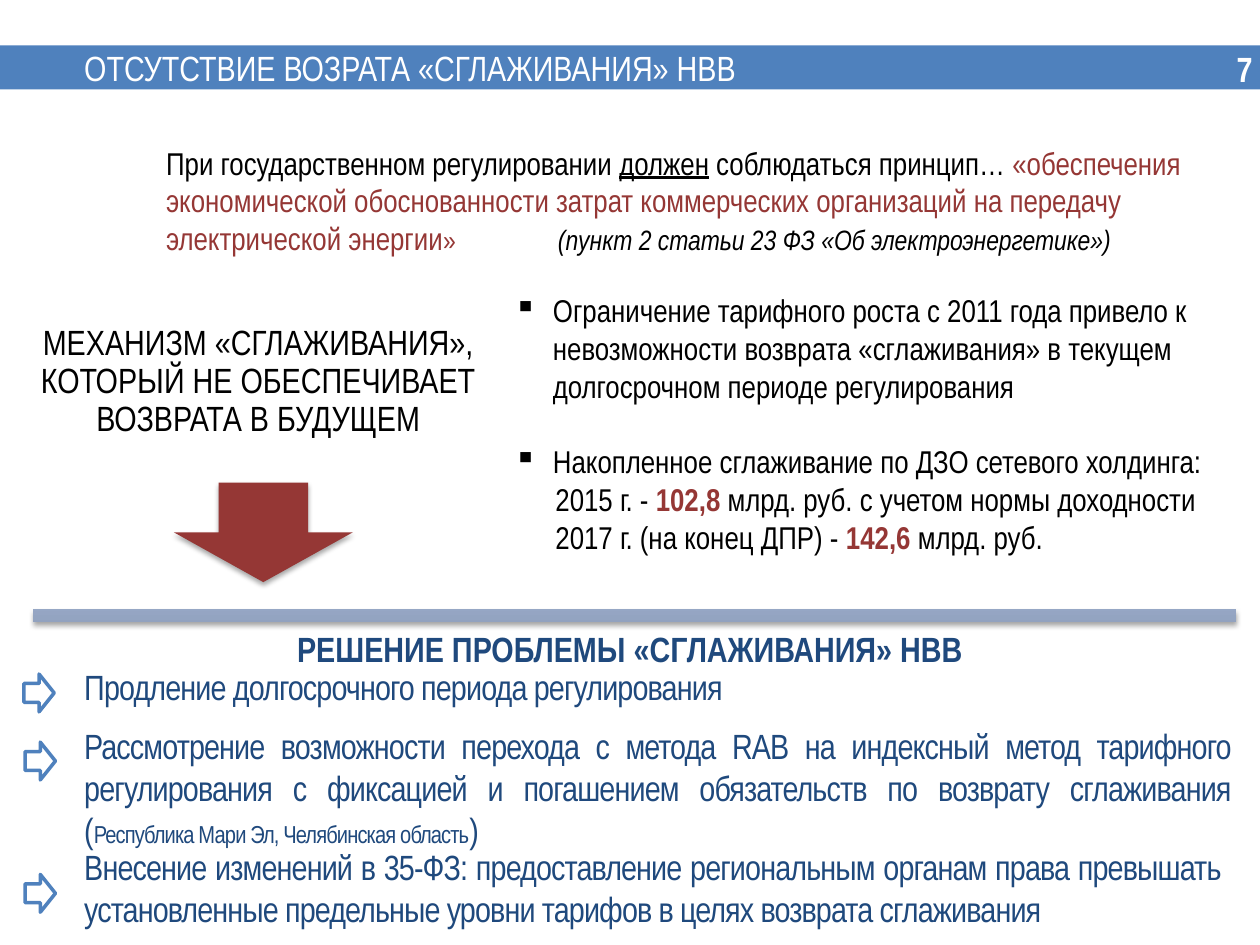
from lxml.etree import SubElement
from pptx import Presentation
from pptx.dml.color import RGBColor
from pptx.enum.shapes import MSO_SHAPE
from pptx.enum.text import MSO_ANCHOR, PP_ALIGN
from pptx.oxml.ns import qn
from pptx.util import Inches, Pt

THEME = {
    "font": "Arial Narrow",
    "band": "4F81BD", "white": "FFFFFF", "black": "000000",
    "navy": "1F497D", "red": "953735", "bar": ("818FA8", "A7BADC"),
    "large": 20, "body": 18, "note": 16, "small": 14,
}
RED = {"color": "red"}
RED_BOLD = {"color": "red", "bold": True}
ACTION = {"align": PP_ALIGN.JUSTIFY, "color": "navy", "tracking": -50}
CENTERED = {"align": PP_ALIGN.CENTER, "line_spacing": 0.9}
BULLET = {"size": "body", "bullet": "▪", "indent": 0.31}
FIGURE = {"size": "body", "indent": 0.33}

TEXT_BOXES = [
    {"at": (9.71, 0.33, 0.33, 0.44), "wrap": False, "paragraphs": [
        ({"align": PP_ALIGN.RIGHT, "color": "white", "bold": True}, ["7"])]},
    {"at": (0.51, 0.32, 8.35, 0.44), "paragraphs": [
        ({"color": "white", "indent": 0.06}, ["ОТСУТСТВИЕ ВОЗРАТА «СГЛАЖИВАНИЯ» НВВ"])]},
    {"at": (1.22, 1.09, 8.5, 1.01), "paragraphs": [
        ({"size": "body", "tab": 3.11}, [
            "При государственном регулировании ",
            ("должен", {"underline": True}),
            " соблюдаться принцип… ",
            ("«обеспечения экономической обоснованности затрат коммерческих "
             "организаций на передачу электрической энергии", RED),
            ("»\t", {"color": "red", "size": "note"}),
            ("(пункт 2 статьи 23 ФЗ «Об электроэнергетике»)", {"size": "note", "italic": True}),
        ])]},
    {"at": (0.12, 2.57, 3.86, 1.34), "insets": (0.16, 0.16, 0.16, 0.57),
     "anchor": MSO_ANCHOR.MIDDLE, "paragraphs": [
        (CENTERED, ["МЕХАНИЗМ «СГЛАЖИВАНИЯ», КОТОРЫЙ НЕ ОБЕСПЕЧИВАЕТ ВОЗВРАТА В БУДУЩЕМ"])]},
    {"at": (3.98, 2.26, 5.91, 2.52), "paragraphs": [
        (BULLET, ["Ограничение тарифного роста с 2011 года привело к невозможности возврата "
                  "«сглаживания» в текущем долгосрочном периоде регулирования"]),
        (BULLET | {"before": 21.5}, ["Накопленное сглаживание по ДЗО сетевого холдинга:"]),
        (FIGURE, ["2015 г. - ", ("102,8 ", RED_BOLD), "млрд. руб. с учетом нормы доходности"]),
        (FIGURE, ["2017 г. (на конец ДПР) - ", ("142,6", RED_BOLD), " млрд. руб."])]},
    {"at": (-0.04, 4.85, 10.08, 0.63), "insets": (0.16,) * 4,
     "anchor": MSO_ANCHOR.MIDDLE, "paragraphs": [
        (CENTERED | {"color": "navy", "bold": True}, ["РЕШЕНИЕ ПРОБЛЕМЫ «СГЛАЖИВАНИЯ» НВВ"])]},
    {"at": (0.57, 5.23, 9.29, 1.92), "paragraphs": [
        (ACTION, ["Продление долгосрочного периода регулирования"]),
        (ACTION | {"before": 9.7}, [
            "Рассмотрение возможности перехода с метода RAB на индексный метод тарифного "
            "регулирования с фиксацией и погашением обязательств по возврату сглаживания (",
            ("Республика Мари Эл, Челябинская область", {"size": "small"}),
            ")"])]},
    {"at": (0.57, 6.66, 9.21, 0.77), "paragraphs": [
        (ACTION, ["Внесение изменений в 35-ФЗ: предоставление региональным органам права превышать "
                  "установленные предельные уровни тарифов в целях возврата сглаживания"])]},
]
ACTION_ARROWS = [(0.19, 5.35), (0.2, 5.89), (0.2, 6.94)]


def color_of(name):
    return RGBColor.from_string(THEME[name])


def style_font(font, style):
    if "size" in style:
        font.size = Pt(THEME[style["size"]])
    if "color" in style:
        font.color.rgb = color_of(style["color"])
    for name in ("bold", "italic", "underline"):
        if name in style:
            setattr(font, name, style[name])


def fill_paragraph(paragraph, style, runs):
    properties = paragraph._p.get_or_add_pPr()
    if "indent" in style:
        properties.set("marL", str(Inches(style["indent"])))
    if "bullet" in style:
        properties.set("indent", str(-Inches(style["indent"])))
        SubElement(properties, qn("a:buChar"), char=style["bullet"])
    if "tab" in style:
        tabs = SubElement(properties, qn("a:tabLst"))
        SubElement(tabs, qn("a:tab"), pos=str(Inches(style["tab"])), algn="l")
    paragraph.font.name = THEME["font"]
    style_font(paragraph.font, {"size": "large", "color": "black"} | style)
    paragraph.alignment = style.get("align", PP_ALIGN.LEFT)
    paragraph.line_spacing = style.get("line_spacing")
    if "before" in style:
        paragraph.space_before = Pt(style["before"])
    for item in runs:
        text, run_style = (item, {}) if isinstance(item, str) else item
        run = paragraph.add_run()
        run.text = text
        style_font(run.font, run_style)
        if "tracking" in style:
            run._r.get_or_add_rPr().set("spc", str(style["tracking"]))


def add_text(slide, box):
    frame = slide.shapes.add_textbox(*map(Inches, box["at"])).text_frame
    frame.word_wrap = box.get("wrap", True)
    frame.vertical_anchor = box.get("anchor", MSO_ANCHOR.TOP)
    insets = box.get("insets", (0.1, 0.05, 0.1, 0.05))
    for side, inset in zip(("left", "top", "right", "bottom"), insets):
        setattr(frame, f"margin_{side}", Inches(inset))
    for index, (style, runs) in enumerate(box["paragraphs"]):
        paragraph = frame.add_paragraph() if index else frame.paragraphs[0]
        fill_paragraph(paragraph, style, runs)


def add_shape(slide, kind, at, fill=None):
    shape = slide.shapes.add_shape(kind, *map(Inches, at))
    shape.shadow.inherit = False
    shape.line.fill.background()
    if fill:
        shape.fill.solid()
        shape.fill.fore_color.rgb = color_of(fill)
    else:
        shape.fill.background()
    return shape


def add_shadow(shape):
    effects = shape._element.spPr.find(qn("a:effectLst"))
    shadow = SubElement(effects, qn("a:outerShdw"), blurRad=str(Pt(3.1)),
                        dist=str(Pt(1.8)), dir="5400000", rotWithShape="0")
    color = SubElement(shadow, qn("a:srgbClr"), val=THEME["black"])
    SubElement(color, qn("a:alpha"), val="35000")


def main():
    presentation = Presentation()
    presentation.slide_width, presentation.slide_height = Inches(10), Inches(7.5)
    slide = presentation.slides.add_slide(presentation.slide_layouts[6])

    add_shape(slide, MSO_SHAPE.RECTANGLE, (0, 0.36, 10, 0.35), "band")
    add_shadow(add_shape(slide, MSO_SHAPE.DOWN_ARROW, (1.38, 3.83, 1.42, 0.79), "red"))

    divider = add_shape(slide, MSO_SHAPE.MATH_MINUS, (-1.46, 4.46, 12.99, 0.85))
    divider.adjustments[0] = 0.12
    divider.fill.gradient()
    divider.fill.gradient_angle = 90
    for stop, color in zip(divider.fill.gradient_stops, THEME["bar"]):
        stop.color.rgb = RGBColor.from_string(color)
    add_shadow(divider)

    for box in TEXT_BOXES:
        add_text(slide, box)
    for left, top in ACTION_ARROWS:
        arrow = add_shape(slide, MSO_SHAPE.RIGHT_ARROW, (left, top, 0.24, 0.3))
        arrow.line.color.rgb = color_of("band")
        arrow.line.width = Pt(2)

    presentation.save("out.pptx")


if __name__ == "__main__":
    main()
